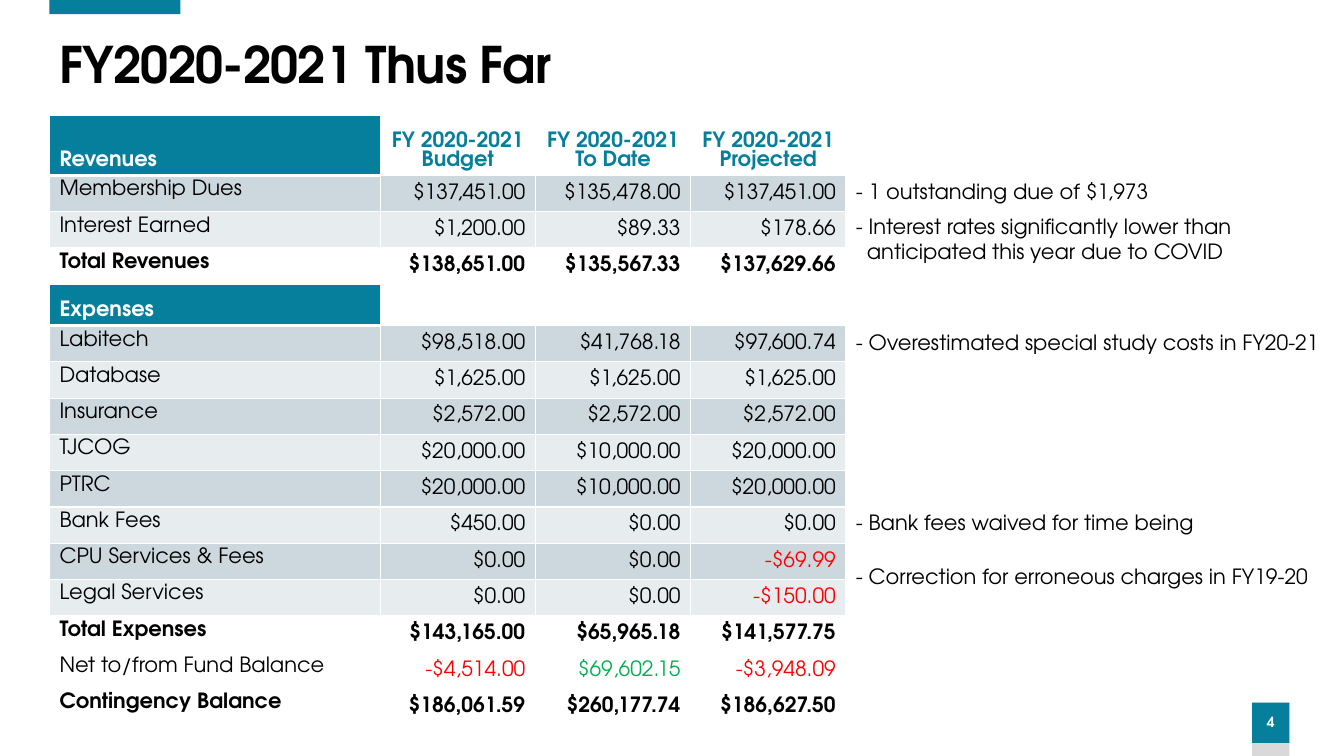
from lxml import etree
from pptx import Presentation
from pptx.dml.color import RGBColor
from pptx.enum.shapes import MSO_SHAPE
from pptx.enum.text import MSO_ANCHOR, MSO_AUTO_SIZE, PP_ALIGN
from pptx.oxml.ns import qn
from pptx.util import Inches, Pt

RECTANGLE = MSO_SHAPE.RECTANGLE
TOP, MIDDLE, BOTTOM = MSO_ANCHOR.TOP, MSO_ANCHOR.MIDDLE, MSO_ANCHOR.BOTTOM
LEFT, CENTER, RIGHT = PP_ALIGN.LEFT, PP_ALIGN.CENTER, PP_ALIGN.RIGHT
GROW = MSO_AUTO_SIZE.SHAPE_TO_FIT_TEXT

COLORS = {
    "teal": "067F9C", "gray": "D9D9D9", "dark_band": "CCD8DE", "light_band": "E7ECEF",
    "white": "FFFFFF", "black": "000000", "red": "FF0000", "green": "00B050",
}
TABLE_LEFT = 0.49
COLUMN_WIDTHS = (3.28, 1.54, 1.54, 1.54)
ROW_HEIGHT = 0.36
NOTES_LEFT = 8.39

REVENUES = [
    ("Revenues", "FY 2020-2021\nBudget", "FY 2020-2021\nTo Date", "FY 2020-2021\nProjected"),
    ("Membership Dues", "$137,451.00", "$135,478.00", "$137,451.00"),
    ("Interest Earned", "$1,200.00", "$89.33", "$178.66"),
    ("Total Revenues", "$138,651.00", "$135,567.33", "$137,629.66"),
]
EXPENSES = [
    ("Expenses", "", "", ""),
    ("Labitech", "$98,518.00", "$41,768.18", "$97,600.74"),
    ("Database", "$1,625.00", "$1,625.00", "$1,625.00"),
    ("Insurance", "$2,572.00", "$2,572.00", "$2,572.00"),
    ("TJCOG", "$20,000.00", "$10,000.00", "$20,000.00"),
    ("PTRC", "$20,000.00", "$10,000.00", "$20,000.00"),
    ("Bank Fees", "$450.00", "$0.00", "$0.00"),
    ("CPU Services & Fees", "$0.00", "$0.00", "-$69.99"),
    ("Legal Services", "$0.00", "$0.00", "-$150.00"),
    ("Total Expenses", "$143,165.00", "$65,965.18", "$141,577.75"),
]
BALANCES = [
    ("Net to/from Fund Balance", "-$4,514.00", "$69,602.15", "-$3,948.09"),
    ("Contingency Balance", "$186,061.59", "$260,177.74", "$186,627.50"),
]
NOTES = [
    (1.72, 3.16, 0.35, "- 1 outstanding due of $1,973"),
    (2.07, 4, 0.61, "- Interest rates significantly lower than\nanticipated this year due to COVID"),
    (3.22, 4.92, 0.35, "- Overestimated special study costs in FY20-21"),
    (5.01, 3.61, 0.35, "- Bank fees waived for time being"),
    (5.54, 4.82, 0.35, "- Correction for erroneous charges in FY19-20"),
]


class BudgetSlide:
    """Holds the budget style and the current slide, and adds each kind of element."""

    font = "TeX Gyre Adventor"
    size = 15

    def __init__(self, deck):
        self.page = deck.slides.add_slide(deck.slide_layouts[5])

    def color(self, name):
        return RGBColor.from_string(COLORS[name])

    def span(self, para, text, color="black", bold=False, size=None):
        span = para.add_run()
        span.text = text
        span.font.name = self.font
        span.font.size = Pt(size or self.size)
        span.font.bold = bold
        span.font.color.rgb = self.color(color)
        return span

    def title(self, text):
        box = self.page.shapes.title
        box.left, box.top = Inches(0.49), Inches(0.34)
        box.width, box.height = Inches(12.22), Inches(0.65)
        frame = box.text_frame
        frame.auto_size = GROW
        frame.vertical_anchor = MIDDLE
        para = frame.paragraphs[0]
        para.alignment = LEFT
        para.line_spacing = 0.9
        span = self.span(para, text, bold=True, size=36)
        span.font._element.set("spc", "-60")

    def block(self, left, top, width, height, fill):
        box = self.page.shapes.add_shape(
            RECTANGLE, Inches(left), Inches(top), Inches(width), Inches(height))
        box.shadow.inherit = False
        box.fill.solid()
        box.fill.fore_color.rgb = self.color(fill)
        box.line.fill.background()
        return box

    def page_number(self, text):
        self.block(12.42, 6.97, 0.37, 0.53, "gray")
        frame = self.block(12.42, 6.97, 0.37, 0.4, "teal").text_frame
        frame.margin_left = frame.margin_right = 0
        frame.vertical_anchor = MIDDLE
        para = frame.paragraphs[0]
        para.alignment = CENTER
        para.line_spacing = 0.9
        para.space_before = Pt(10)
        self.span(para, text, "white", True, 10)

    def note(self, top, width, height, text):
        box = self.page.shapes.add_textbox(
            Inches(NOTES_LEFT), Inches(top), Inches(width), Inches(height))
        frame = box.text_frame
        frame.word_wrap = False
        frame.auto_size = GROW
        para = frame.paragraphs[0]
        properties = para._p.get_or_add_pPr()
        properties.set("marL", str(Inches(0.11)))
        properties.set("indent", str(-Inches(0.11)))
        for index, line in enumerate(text.split("\n")):
            if index:
                para.add_line_break()
            self.span(para, line)

    def borders(self, cell, **widths):
        properties = cell._tc.get_or_add_tcPr()
        for index, (side, width) in enumerate(widths.items()):
            line = etree.Element(qn(f"a:ln{side}"), w=str(Pt(width)))
            fill = etree.SubElement(line, qn("a:solidFill"))
            etree.SubElement(fill, qn("a:srgbClr"), val=COLORS["white"])
            properties.insert(index, line)

    def cell(self, cell, text, fill, color, bold, align, anchor):
        cell.fill.solid()
        cell.fill.fore_color.rgb = self.color(fill)
        cell.vertical_anchor = anchor
        for index, line in enumerate(text.split("\n") if text else []):
            frame = cell.text_frame
            para = frame.add_paragraph() if index else frame.paragraphs[0]
            para.alignment = align
            self.span(para, line, color, bold)

    def header_row(self, table, texts):
        for column, text in enumerate(texts):
            cell = table.cell(0, column)
            if column:
                self.cell(cell, text, "white", "teal", True, CENTER, BOTTOM)
            else:
                self.cell(cell, text, "teal", "white", True, LEFT, BOTTOM)
                self.borders(cell, L=1, T=1, B=3)

    def body_row(self, table, row, texts):
        label = texts[0]
        bold = label.startswith(("Total", "Contingency"))
        net = label.startswith("Net")
        banded = not (bold or net)
        fill = ("light_band", "dark_band")[row % 2] if banded else "white"
        for column, text in enumerate(texts):
            cell = table.cell(row, column)
            color = "black"
            if text.startswith("-"):
                color = "red"
            elif net and column:
                color = "green"
            align, anchor = (RIGHT, MIDDLE) if column else (LEFT, TOP)
            self.cell(cell, text, fill, color, bold, align, anchor)
            if banded:
                self.borders(cell, L=1, R=1, **({"T": 1} if row > 1 else {}), B=1)

    def table(self, top, rows, header_height=None):
        heights = [ROW_HEIGHT] * len(rows)
        if header_height:
            heights[0] = header_height
        table = self.page.shapes.add_table(
            len(rows), len(COLUMN_WIDTHS), Inches(TABLE_LEFT), Inches(top),
            Inches(sum(COLUMN_WIDTHS)), Inches(sum(heights))).table
        table.first_row = table.horz_banding = False
        for column, width in zip(table.columns, COLUMN_WIDTHS):
            column.width = Inches(width)
        for index, (height, texts) in enumerate(zip(heights, rows)):
            table.rows[index].height = Inches(height)
            if header_height and index == 0:
                self.header_row(table, texts)
            else:
                self.body_row(table, index, texts)


def main():
    deck = Presentation()
    deck.slide_width, deck.slide_height = Inches(13.33), Inches(7.5)
    slide = BudgetSlide(deck)
    slide.page_number("4")
    slide.block(0.49, 0, 1.3, 0.14, "teal")
    slide.title("FY2020-2021 Thus Far")
    slide.table(1.14, REVENUES, 0.49)
    slide.table(2.82, EXPENSES, 0.41)
    slide.table(6.47, BALANCES)
    for note in NOTES:
        slide.note(*note)
    deck.save("out.pptx")


if __name__ == "__main__":
    main()
